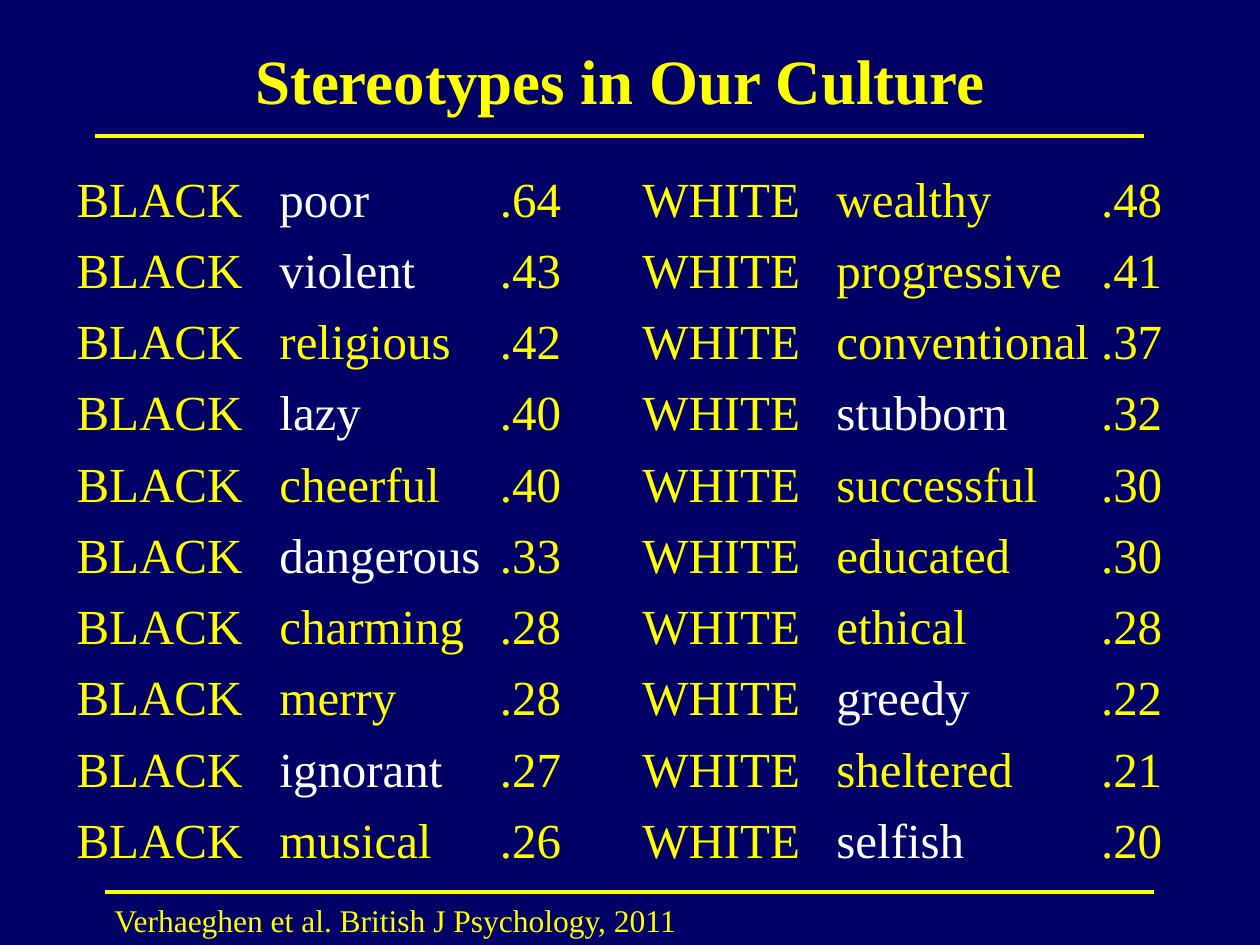
from lxml import etree
from pptx import Presentation
from pptx.dml.color import RGBColor
from pptx.enum.shapes import MSO_CONNECTOR
from pptx.enum.text import MSO_ANCHOR, PP_ALIGN
from pptx.oxml.ns import qn
from pptx.util import Inches, Pt

NAVY, YELLOW, WHITE = "000066", "FFFF00", "FFFFFF"
FONT = "Times New Roman"
NEGATIVE = {"poor", "violent", "lazy", "dangerous", "ignorant",
            "stubborn", "greedy", "selfish"}

# label, left, width, tab stops, then the upper and lower groups of traits
COLUMNS = [
    ("BLACK", 0.51, 4.25, (1.61, 3.36),
     [("poor", ".64"), ("violent", ".43"), ("religious", ".42"),
      ("lazy", ".40"), ("cheerful", ".40"), ("dangerous", ".33")],
     [("charming", ".28"), ("merry", ".28"), ("ignorant", ".27"),
      ("musical", ".26")]),
    ("WHITE", 5, 4.42, (1.54, 3.64),
     [("wealthy", ".48"), ("progressive", ".41"), ("conventional", ".37"),
      ("stubborn", ".32"), ("successful", ".30"), ("educated", ".30")],
     [("ethical", ".28"), ("greedy", ".22"), ("sheltered", ".21"),
      ("selfish", ".20")]),
]
GROUP_PLACES = [(1.29, 3.54), (4.68, 2.29)]  # top, height


def rgb(color):
    return RGBColor.from_string(color)


def style(paragraph, size, bold=False):
    font = paragraph.font
    font.name, font.size, font.bold = FONT, Pt(size), bold
    font.color.rgb = rgb(YELLOW)


def add_title(page, text):
    title = page.shapes.title
    title.left, title.top = Inches(0.67), Inches(0.17)
    title.width, title.height = Inches(8.5), Inches(0.92)
    frame = title.text_frame
    frame.text = text
    frame.vertical_anchor = MSO_ANCHOR.MIDDLE
    paragraph = frame.paragraphs[0]
    paragraph.alignment = PP_ALIGN.CENTER
    style(paragraph, 36, bold=True)


def add_rule(page, left, top):
    rule = page.shapes.add_connector(
        MSO_CONNECTOR.STRAIGHT, Inches(left), Inches(top),
        Inches(left + 8.33), Inches(top))
    rule.line.color.rgb = rgb(YELLOW)
    rule.line.width = Pt(2.25)
    etree.SubElement(rule._element.spPr, qn("a:effectLst"))


def add_text_frame(page, left, top, width, height):
    box = page.shapes.add_textbox(
        Inches(left), Inches(top), Inches(width), Inches(height))
    box.text_frame.word_wrap = True
    return box.text_frame


def add_tab_stops(paragraph, stops):
    tabs = etree.SubElement(paragraph._p.get_or_add_pPr(), qn("a:tabLst"))
    for stop in stops:
        etree.SubElement(tabs, qn("a:tab"), pos=str(Inches(stop)), algn="l")


def add_traits(page, place, label, stops, traits):
    """One paragraph per trait: label, trait and value, aligned by tabs."""
    frame = add_text_frame(page, *place)
    for index, (trait, value) in enumerate(traits):
        paragraph = frame.add_paragraph() if index else frame.paragraphs[0]
        if index:
            paragraph.space_before = Pt(7)
        add_tab_stops(paragraph, stops)
        style(paragraph, 28)
        for text in (f"{label}\t", trait, f"\t{value}"):
            span = paragraph.add_run()
            span.text = text
            span.font.color.rgb = rgb(WHITE if text in NEGATIVE else YELLOW)


def add_source(page, text):
    frame = add_text_frame(page, 0.81, 7.1, 5.69, 0.4)
    frame.text = text
    style(frame.paragraphs[0], 18)


def main():
    deck = Presentation()
    deck.slide_width, deck.slide_height = Inches(10), Inches(7.5)
    page = deck.slides.add_slide(deck.slide_layouts[5])
    page.background.fill.solid()
    page.background.fill.fore_color.rgb = rgb(NAVY)

    add_title(page, "Stereotypes in Our Culture")
    add_rule(page, 0.75, 1.08)
    add_rule(page, 0.83, 7.08)
    add_source(page, "Verhaeghen et al. British J Psychology, 2011")
    for label, left, width, stops, *groups in COLUMNS:
        for (top, height), traits in zip(GROUP_PLACES, groups):
            add_traits(page, (left, top, width, height), label, stops, traits)

    deck.save("out.pptx")


if __name__ == "__main__":
    main()
